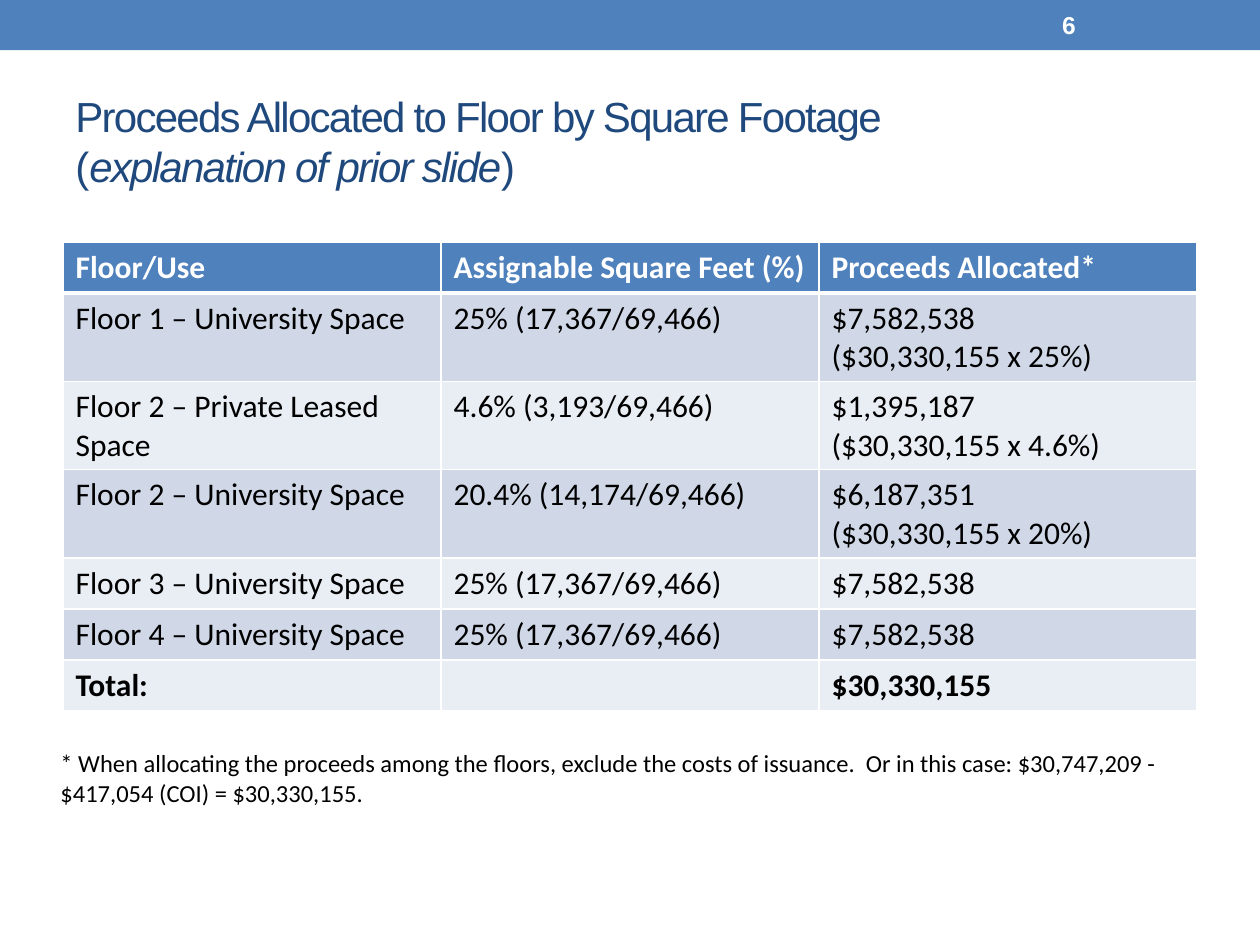
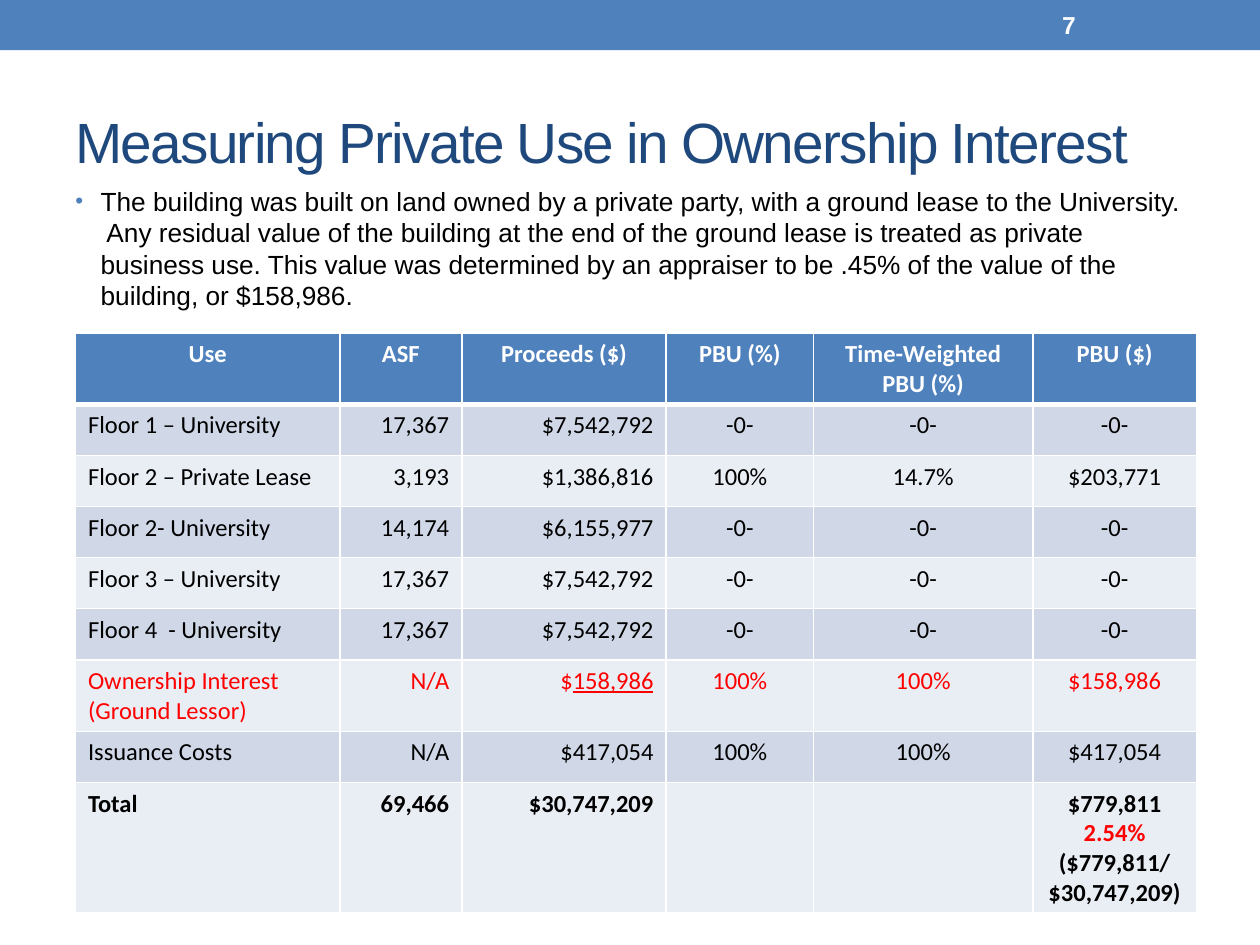
"""Builds two slides on allocating bond proceeds and measuring private use."""
import dataclasses
from typing import NamedTuple

import lxml.etree
import pptx
import pptx.dml.color
import pptx.enum.shapes
import pptx.enum.text
import pptx.oxml.ns
import pptx.util

Cm = pptx.util.Cm
Pt = pptx.util.Pt
qn = pptx.oxml.ns.qn
LEFT, CENTER, RIGHT = (
    pptx.enum.text.PP_ALIGN.LEFT,
    pptx.enum.text.PP_ALIGN.CENTER,
    pptx.enum.text.PP_ALIGN.RIGHT,
)
TOP = pptx.enum.text.MSO_ANCHOR.TOP
MIDDLE = pptx.enum.text.MSO_ANCHOR.MIDDLE

BLUE, NAVY, WHITE, BLACK, RED = "4F81BD", "1F497D", "FFFFFF", "000000", "FF0000"
STRIPES = ("D0D8E8", "E9EDF4")
PAGE_WIDTH, PAGE_HEIGHT = 25.4, 19.05
ROW_HEIGHT = 1.03


@dataclasses.dataclass(frozen=True)
class Style:
    size: float
    color: str = BLACK
    font: str = "Calibri"
    bold: bool = False
    italic: bool = False
    underline: bool = False
    tracking: int = 0


class Span(NamedTuple):
    text: str
    changes: dict = {}


class Place(NamedTuple):
    left: float
    top: float
    width: float
    height: float


class Row(NamedTuple):
    cells: tuple
    changes: dict = {}


@dataclasses.dataclass(frozen=True)
class Grid:
    left: float
    top: float
    size: float
    widths: tuple
    aligns: tuple
    header_align: int
    header: tuple
    rows: tuple


TITLE_PLACE = Place(1.27, 1.47, 22.86, 2.74)
NUMBER_PLACE = Place(21.16, 0.05, 2.97, 0.91)
BODY_PLACE = Place(1.27, 3.61, 22.86, 2.74)
NOTE_PLACE = Place(0.97, 14.96, 23.06, 1.45)
NUMBER_STYLE = Style(14, WHITE, "Arial", bold=True)
BODY_STYLE = Style(15, font="Arial")
NOTE_STYLE = Style(14)

BODY = (
    "The building was built on land owned by a private party, with a ground lease to the "
    "University.  Any residual value of the building at the end of the ground lease is treated "
    "as private business use. This value was determined by an appraiser to be .45% of the value "
    "of the building, or $158,986."
)
NOTE = (
    "* When allocating the proceeds among the floors, exclude the costs of issuance.  "
    "Or in this case: $30,747,209 - $417,054 (COI) = $30,330,155."
)
FULL_FLOOR = ("25% (17,367/69,466)", "$7,582,538")
NO_USE = ("-0-",) * 3
ALL_USE = ("100%",) * 2

ALLOCATION = Grid(
    1.27, 4.88, 18, (7.62,) * 3, (LEFT,) * 3, LEFT,
    ("Floor/Use", "Assignable Square Feet (%)", "Proceeds Allocated*"),
    (
        Row(("Floor 1 – University Space", "25% (17,367/69,466)",
             "$7,582,538\n($30,330,155 x 25%)")),
        Row(("Floor 2 – Private Leased Space", "4.6% (3,193/69,466)",
             "$1,395,187\n($30,330,155 x 4.6%)")),
        Row(("Floor 2 – University Space", "20.4% (14,174/69,466)",
             "$6,187,351\n($30,330,155 x 20%)")),
        Row(("Floor 3 – University Space", *FULL_FLOOR)),
        Row(("Floor 4 – University Space", *FULL_FLOOR)),
        Row(("Total:", "", "$30,330,155"), {"bold": True}),
    ),
)

PRIVATE_USE = Grid(
    1.52, 6.71, 14, (5.33, 2.46, 4.12, 2.97, 4.42, 3.3),
    (LEFT, RIGHT, RIGHT, CENTER, CENTER, CENTER), CENTER,
    ("Use", "ASF", "Proceeds ($)", "PBU (%)", "Time-Weighted PBU (%)", "PBU ($)"),
    (
        Row(("Floor 1 – University", "17,367", "$7,542,792", *NO_USE)),
        Row(("Floor 2 – Private Lease", "3,193", "$1,386,816", "100%", "14.7%", "$203,771")),
        Row(("Floor 2- University", "14,174", "$6,155,977", *NO_USE)),
        Row(("Floor 3 – University", "17,367", "$7,542,792", *NO_USE)),
        Row(("Floor 4  - University", "17,367", "$7,542,792", *NO_USE)),
        Row(("Ownership Interest (Ground Lessor)", "N/A",
             ((Span("$"), Span("158,986", {"underline": True})),), *ALL_USE, "$158,986"),
            {"color": RED}),
        Row(("Issuance Costs", "N/A", "$417,054", *ALL_USE, "$417,054")),
        Row(("Total", "69,466", "$30,747,209", "", "",
             ((Span("$779,811"),), (Span("2.54%", {"color": RED}),),
              (Span("($779,811/"),), (Span("$30,747,209)"),))),
            {"bold": True}),
    ),
)


def rgb(color: str) -> pptx.dml.color.RGBColor:
    """Turn a hex string into a colour."""
    return pptx.dml.color.RGBColor.from_string(color)


def add_span(para, text: str, style: Style) -> None:
    """Add one styled run to a paragraph."""
    span = para.add_run()
    span.text = text
    font = span.font
    font.size, font.name = Pt(style.size), style.font
    font.bold, font.italic, font.underline = style.bold, style.italic, style.underline
    font.color.rgb = rgb(style.color)
    if style.tracking:
        span._r.get_or_add_rPr().set("spc", str(style.tracking))


def write_lines(frame, content, style: Style, align: int = LEFT) -> None:
    """Write plain text or lines of spans, one paragraph a line."""
    lines = content
    if isinstance(content, str):
        lines = [(Span(line),) for line in content.split("\n")]
    for index, spans in enumerate(lines):
        para = frame.add_paragraph() if index else frame.paragraphs[0]
        para.alignment = align
        for text, changes in spans:
            if text:
                add_span(para, text, dataclasses.replace(style, **changes))
            else:
                para.font.size = Pt(style.size)


def add_box(page, place: Place, anchor=TOP):
    """Add a wrapping text box and return its text frame."""
    frame = page.shapes.add_textbox(*map(Cm, place)).text_frame
    frame.word_wrap = True
    frame.vertical_anchor = anchor
    return frame


def add_page(deck, number: int, title: tuple, title_size: float):
    """Add a page with its band, number and title."""
    page = deck.slides.add_slide(deck.slide_layouts[6])
    band = page.shapes.add_shape(
        pptx.enum.shapes.MSO_SHAPE.RECTANGLE, 0, 0, Cm(PAGE_WIDTH), Cm(1.01))
    band.shadow.inherit = False
    band.fill.solid()
    band.fill.fore_color.rgb = rgb(BLUE)
    band.line.fill.background()
    write_lines(add_box(page, NUMBER_PLACE, MIDDLE), str(number), NUMBER_STYLE)
    para = add_box(page, TITLE_PLACE, MIDDLE).paragraphs[0]
    style = Style(title_size, NAVY, "Arial", tracking=-100)
    for index, spans in enumerate(title):
        if index:
            para.add_line_break()
        for text, changes in spans:
            add_span(para, text, dataclasses.replace(style, **changes))
    return page


def paint_cell(cell, color: str, top: int, bottom: int) -> None:
    """Give a cell white borders and a fill."""
    properties = cell._tc.get_or_add_tcPr()
    for side, points in (("L", 1), ("R", 1), ("T", top), ("B", bottom)):
        line = lxml.etree.SubElement(properties, qn(f"a:ln{side}"), w=str(Pt(points)))
        fill = lxml.etree.SubElement(line, qn("a:solidFill"))
        lxml.etree.SubElement(fill, qn("a:srgbClr"), val=WHITE)
    cell.fill.solid()
    cell.fill.fore_color.rgb = rgb(color)


def add_grid(page, grid: Grid) -> None:
    """Draw a table with a header row and striped rows."""
    rows = (Row(grid.header, {"color": WHITE, "bold": True}), *grid.rows)
    table = page.shapes.add_table(
        len(rows), len(grid.widths), Cm(grid.left), Cm(grid.top),
        Cm(sum(grid.widths)), Cm(ROW_HEIGHT * len(rows))).table
    table.first_row = table.horz_banding = False
    for column, width in zip(table.columns, grid.widths):
        column.width = Cm(width)
    for index, row in enumerate(rows):
        table.rows[index].height = Cm(ROW_HEIGHT)
        style = dataclasses.replace(Style(grid.size), **row.changes)
        color = STRIPES[(index - 1) % 2] if index else BLUE
        for column, content in enumerate(row.cells):
            cell = table.cell(index, column)
            paint_cell(cell, color, 3 if index == 1 else 1, 1 if index else 3)
            align = grid.aligns[column] if index else grid.header_align
            write_lines(cell.text_frame, content, style, align)


def add_bullet(para) -> None:
    """Give a paragraph a hanging blue bullet."""
    para.space_before = Pt(3)
    properties = para._p.get_or_add_pPr()
    properties.set("marL", str(Cm(0.51)))
    properties.set("indent", str(Cm(-0.51)))
    color = lxml.etree.SubElement(properties, qn("a:buClr"))
    lxml.etree.SubElement(color, qn("a:srgbClr"), val=BLUE)
    lxml.etree.SubElement(properties, qn("a:buSzPct"), val="85000")
    lxml.etree.SubElement(properties, qn("a:buFont"), typeface="Arial")
    lxml.etree.SubElement(properties, qn("a:buChar"), char="•")


def main() -> None:
    """Build and save the deck."""
    deck = pptx.Presentation()
    deck.slide_width, deck.slide_height = Cm(PAGE_WIDTH), Cm(PAGE_HEIGHT)

    page = add_page(deck, 6, (
        (Span("Proceeds Allocated to Floor by Square Footage"),),
        (Span("("), Span("explanation of prior slide", {"italic": True}), Span(")")),
    ), 24)
    add_grid(page, ALLOCATION)
    write_lines(add_box(page, NOTE_PLACE), NOTE, NOTE_STYLE)

    page = add_page(deck, 7, ((Span("Measuring Private Use in Ownership Interest"),),), 32.4)
    body = add_box(page, BODY_PLACE)
    write_lines(body, BODY, BODY_STYLE)
    add_bullet(body.paragraphs[0])
    add_grid(page, PRIVATE_USE)

    deck.save("out.pptx")


if __name__ == "__main__":
    main()
